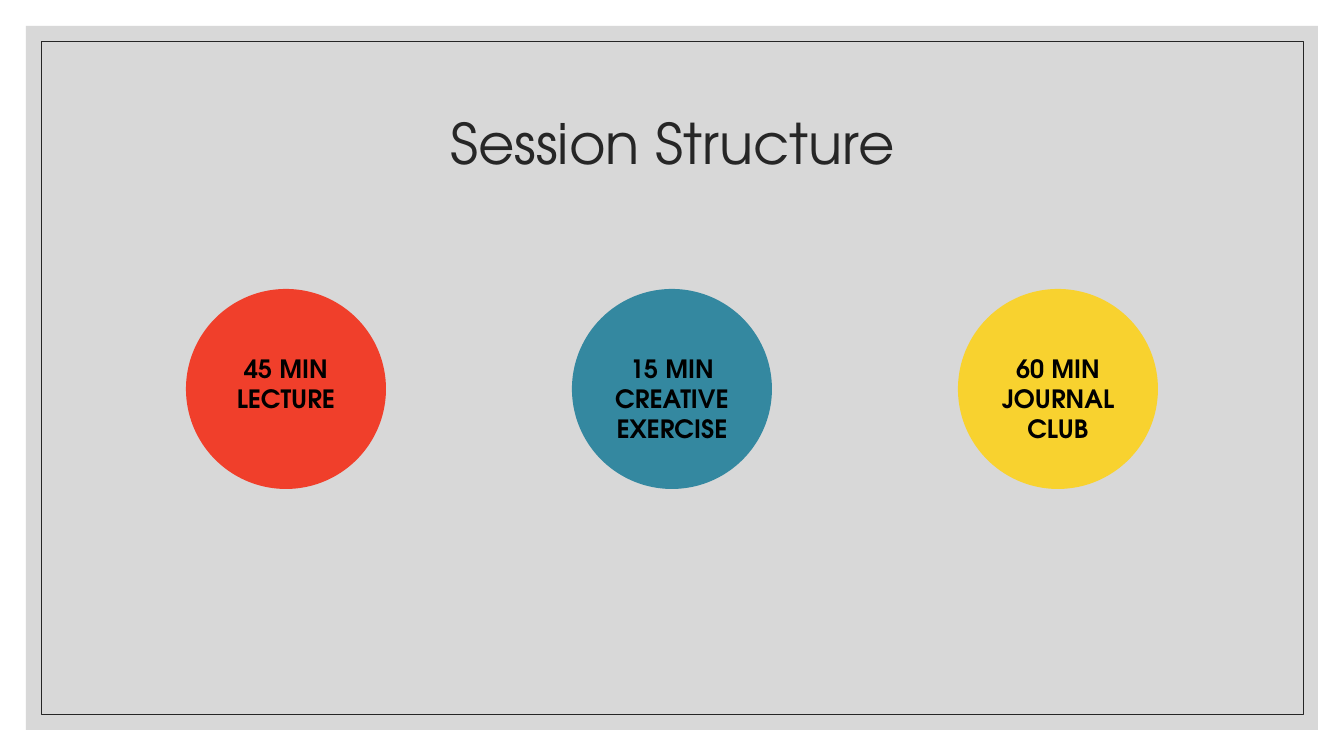
from dataclasses import dataclass

import pptx
import pptx.dml.color
import pptx.enum.shapes
import pptx.enum.text
import pptx.oxml.ns
import pptx.util
from lxml import etree

EMU_PER_PX = 914400 / 100.8
FONT = "TeX Gyre Adventor"
COLORS = {
    "plate": "BFBFBF",
    "ink": "262626",
    "label": "000000",
    "red": "F03F2B",
    "teal": "3488A0",
    "yellow": "F8D22F",
}
SHAPES = pptx.enum.shapes.MSO_SHAPE
ANCHORS = pptx.enum.text.MSO_ANCHOR
CIRCLE_LEFT, CIRCLE_TOP, CIRCLE_SIZE, CIRCLE_PITCH = 186, 289, 200, 386


@dataclass(frozen=True)
class Part:
    label: str
    color: str


PARTS = [
    Part("45 MIN\nLECTURE", "red"),
    Part("15 MIN\nCREATIVE\nEXERCISE", "teal"),
    Part("60 MIN\nJOURNAL\vCLUB", "yellow"),
]


def px(length: int) -> int:
    return round(length * EMU_PER_PX)


def rgb(name: str) -> pptx.dml.color.RGBColor:
    return pptx.dml.color.RGBColor.from_string(COLORS[name])


def add_shape(page, kind, left: int, top: int, width: int, height: int,
              fill: str = "", line: str = ""):
    shape = page.shapes.add_shape(kind, px(left), px(top), px(width), px(height))
    shape.shadow.inherit = False
    if fill:
        shape.fill.solid()
        shape.fill.fore_color.rgb = rgb(fill)
    else:
        shape.fill.background()
    if line:
        shape.line.color.rgb = rgb(line)
        shape.line.width = pptx.util.Pt(0.5)
    else:
        shape.line.fill.background()
    return shape


def set_opacity(shape, percent: int) -> None:
    color = shape.element.spPr.find(".//" + pptx.oxml.ns.qn("a:srgbClr"))
    alpha = etree.SubElement(color, pptx.oxml.ns.qn("a:alpha"))
    alpha.set("val", str(percent * 1000))


def write(frame, text: str, size: int, color: str, bold: bool = False) -> None:
    frame.text = text
    frame.word_wrap = True
    for para in frame.paragraphs:
        para.alignment = pptx.enum.text.PP_ALIGN.CENTER
        for span in para.runs:
            span.font.name = FONT
            span.font.size = pptx.util.Pt(size)
            span.font.bold = bold
            span.font.color.rgb = rgb(color)


def add_backdrop(page) -> None:
    plate = add_shape(page, SHAPES.RECTANGLE, 26, 26, 1292, 704, fill="plate")
    set_opacity(plate, 60)
    add_shape(page, SHAPES.RECTANGLE, 41, 41, 1262, 673, line="ink")


def add_title(page, text: str) -> None:
    title = page.shapes.title
    title.element.getparent().append(title.element)  # in front of the backdrop
    title.left, title.top = px(118), px(71)
    title.width, title.height = px(1109), px(151)
    write(title.text_frame, text, 40, "ink")
    title.text_frame.vertical_anchor = ANCHORS.MIDDLE
    title.text_frame.paragraphs[0].line_spacing = 0.9


def add_part(page, index: int, part: Part) -> None:
    circle = add_shape(page, SHAPES.OVAL, CIRCLE_LEFT + index * CIRCLE_PITCH,
                       CIRCLE_TOP, CIRCLE_SIZE, CIRCLE_SIZE, fill=part.color)
    frame = circle.text_frame
    write(frame, part.label, 18, "label", bold=True)
    frame.vertical_anchor = ANCHORS.TOP
    frame.margin_top = px(35)


def main() -> None:
    deck = pptx.Presentation()
    deck.slide_width, deck.slide_height = px(1344), px(756)
    page = deck.slides.add_slide(deck.slide_layouts.get_by_name("Title Only"))
    add_backdrop(page)
    add_title(page, "Session Structure")
    for index, part in enumerate(PARTS):
        add_part(page, index, part)
    deck.save("out.pptx")


if __name__ == "__main__":
    main()
